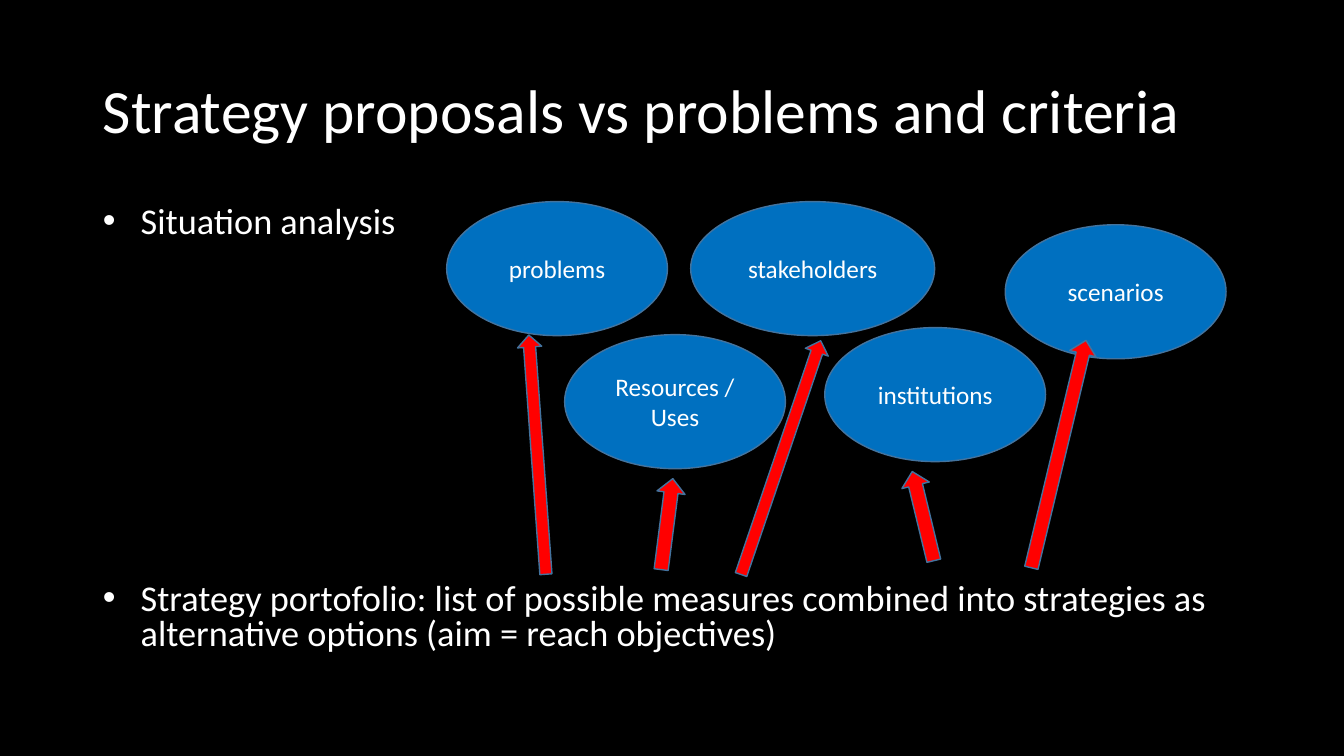
import pptx
import pptx.dml.color
import pptx.enum.shapes
import pptx.enum.text
import pptx.util

Inches = pptx.util.Inches
Pt = pptx.util.Pt
SHAPE = pptx.enum.shapes.MSO_SHAPE
ALIGN = pptx.enum.text.PP_ALIGN
ANCHOR = pptx.enum.text.MSO_ANCHOR

WHITE, BLACK, BLUE, RED, EDGE = "FFFFFF", "000000", "0070C0", "FF0000", "43739E"
TOPICS = [
    ("Resources / Uses", 1.17, 1.32, 2.19),
    ("stakeholders", 2.42, 0, 2.42),
    ("institutions", 3.75, 1.25, 2.19),
    ("scenarios", 5.54, 0.23, 2.19),
    ("problems", 0, 0, 2.19),
]
ARROWS = [
    (-0.29, 2.39, 2.38, 0.24, 265.9),
    (2.09, 2.42, 2.45, 0.24, 288.8),
    (4.91, 2.37, 2.32, 0.27, 283.5),
    (1.73, 3.06, 0.91, 0.28, 277.3),
    (4.27, 2.98, 0.91, 0.28, 256.4),
]


def paint(color_format, color):
    """Set a fill's, line's or font's solid colour from a hex string."""
    color_format.solid()
    color_format.fore_color.rgb = pptx.dml.color.RGBColor.from_string(color)


def place(sp, left, top, width, height):
    """Move and size a shape, in inches."""
    sp.left, sp.top = Inches(left), Inches(top)
    sp.width, sp.height = Inches(width), Inches(height)


def style(p, size, align):
    """Format a paragraph in white Calibri."""
    p.font.name = "Calibri"
    p.font.size = Pt(size)
    paint(p.font.fill, WHITE)
    p.alignment = align


def add_title(s, text, left, top, width, height):
    """Fill the title placeholder in the given box."""
    sp = s.shapes.title
    place(sp, left, top, width, height)
    tf = sp.text_frame
    tf.text = text
    tf.vertical_anchor = ANCHOR.MIDDLE
    p = tf.paragraphs[0]
    p.line_spacing = 0.9
    style(p, 44, ALIGN.LEFT)


def add_points(s, points, gap, left, top, width, height):
    """Fill the body placeholder with bullets set apart by a gap in points."""
    sp = s.placeholders[1]
    place(sp, left, top, width, height)
    tf = sp.text_frame
    tf.auto_size = pptx.enum.text.MSO_AUTO_SIZE.NONE
    tf.text = "\n".join(points)
    for p in tf.paragraphs:
        p.line_spacing = 0.8
        style(p, 25.9, ALIGN.LEFT)
    for p in tf.paragraphs[1:]:
        p.space_before = Pt(gap)


def add_outlined(s, kind, color, left, top, width, height):
    """Add a filled preset shape with the thin edge of the diagram."""
    sp = s.shapes.add_shape(kind, Inches(left), Inches(top), Inches(width), Inches(height))
    sp.shadow.inherit = False
    paint(sp.fill, color)
    paint(sp.line.fill, EDGE)
    sp.line.width = Pt(1)
    return sp


def add_diagram(s, left, top):
    """Draw the topic ellipses and the arrows pointing to them."""
    for text, x, y, width in TOPICS:
        sp = add_outlined(s, SHAPE.OVAL, BLUE, left + x, top + y, width, 1.33)
        tf = sp.text_frame
        tf.word_wrap = True
        tf.vertical_anchor = ANCHOR.MIDDLE
        tf.text = text
        style(tf.paragraphs[0], 18, ALIGN.CENTER)
    for x, y, length, thickness, angle in ARROWS:
        sp = add_outlined(s, SHAPE.RIGHT_ARROW, RED, left + x, top + y, length, thickness)
        sp.rotation = angle


def main():
    """Build and save the slide."""
    prs = pptx.Presentation()
    prs.slide_width, prs.slide_height = Inches(13.33), Inches(7.5)
    s = prs.slides.add_slide(prs.slide_layouts[1])
    paint(s.background.fill, BLACK)
    add_title(s, "Strategy proposals vs problems and criteria", 0.92, 0.4, 11.5, 1.45)
    points = [
        "Situation analysis",
        "Strategy portofolio: list of possible measures combined into strategies"
        " as alternative options (aim = reach objectives)",
    ]
    add_points(s, points, 244.7, 0.92, 2, 11.5, 4.76)
    add_diagram(s, 4.43, 2)
    prs.save("out.pptx")


if __name__ == "__main__":
    main()
